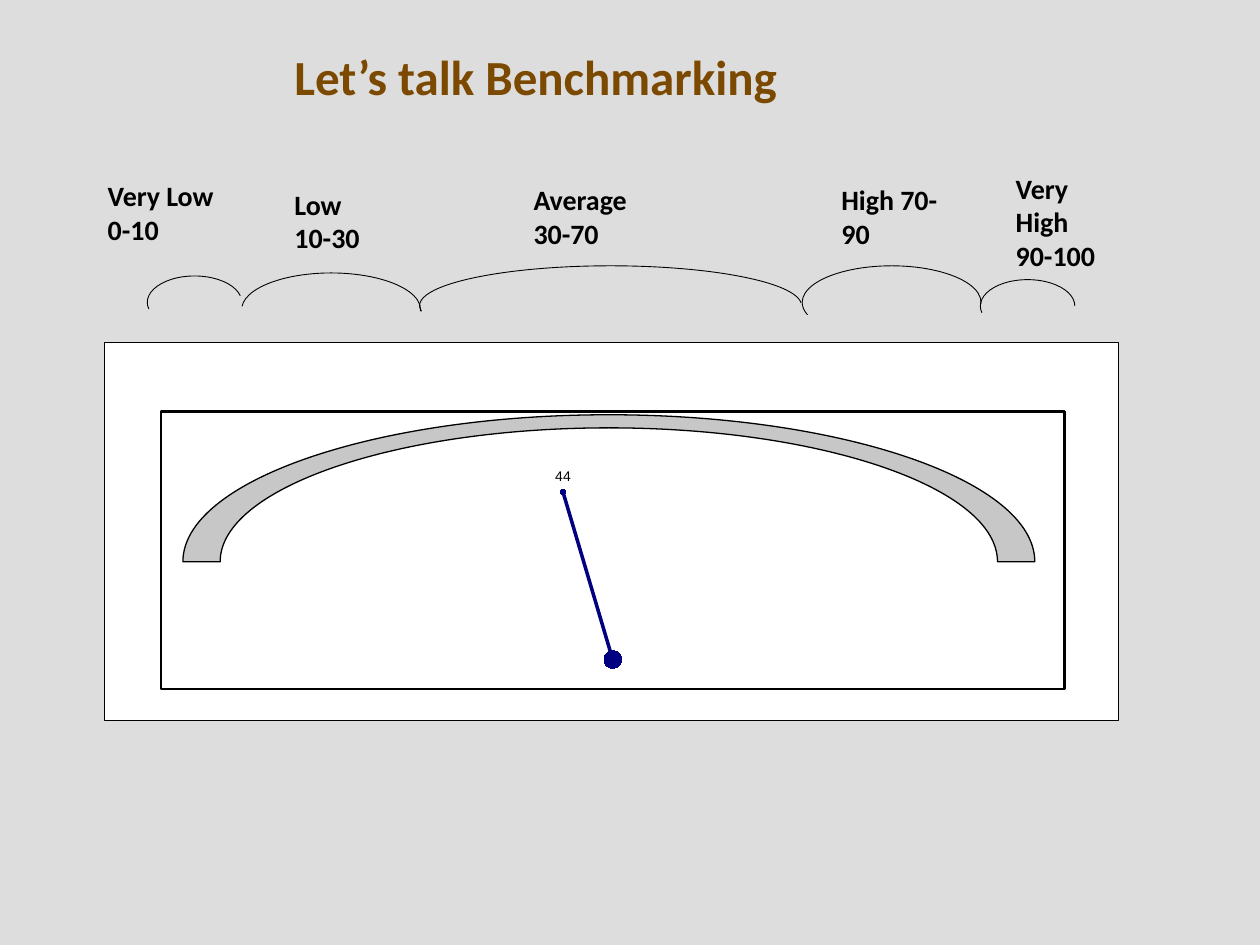
from dataclasses import dataclass

from lxml import etree
from pptx import Presentation
from pptx.chart.data import XyChartData
from pptx.dml.color import RGBColor
from pptx.enum.chart import XL_CHART_TYPE, XL_MARKER_STYLE
from pptx.enum.shapes import MSO_SHAPE
from pptx.oxml import parse_xml
from pptx.oxml.ns import nsdecls, qn
from pptx.util import Pt

ARC = MSO_SHAPE.ARC
SCATTER = XL_CHART_TYPE.XY_SCATTER_SMOOTH
CIRCLE = XL_MARKER_STYLE.CIRCLE

COLORS = {
    "background": "DDDDDD",
    "title": "7B4900",
    "ink": "000000",
    "panel": "FFFFFF",
    "needle": "000080",
    "dial": "C7C7C7",
}


@dataclass(frozen=True)
class Box:
    left: float
    top: float
    width: float
    height: float

    def lengths(self) -> tuple:
        return Pt(self.left), Pt(self.top), Pt(self.width), Pt(self.height)


@dataclass(frozen=True)
class Bracket:
    box: Box
    start: float  # degrees
    end: float


@dataclass(frozen=True)
class Caption:
    box: Box
    lines: tuple
    wrap: bool = True
    size: float = 16
    color: str = "ink"


BRACKETS = [
    Bracket(Box(84.2, 157.7, 54, 30.2), 171.6, 351.7),
    Bracket(Box(138.1, 156, 102.2, 41.8), 182.1, 1.1),
    Bracket(Box(239.8, 151.9, 218.2, 45.4), 178.3, 359.2),
    Bracket(Box(458.4, 151.9, 102.2, 41.8), 171.6, 1.1),
    Bracket(Box(560.2, 159.8, 54, 30.2), 171.6, 0),
]

CAPTIONS = [
    Caption(Box(54.5, 98.6, 83.5, 65.5), ("Very Low", "0-10")),
    Caption(Box(161.2, 103.5, 59.8, 46.1), ("Low 10-30",)),
    Caption(Box(473.7, 100.8, 71.3, 46.1), ("High 70-90",)),
    Caption(Box(573.3, 94.3, 75.6, 65.5), ("Very High", "90-100")),
    Caption(Box(161.2, 23, 385.9, 41), ("Let’s talk Benchmarking",),
            size=28, color="title"),
]
AVERAGE = Caption(Box(297.8, 100.8, 81.4, 46.1), ("Average", "30-70"), wrap=False)

GAUGE = Box(59.5, 195.4, 579.6, 216.5)
PLOT_SHARE = {"x": 0.056, "y": 0.183, "w": 0.891, "h": 0.734}
SCORE = "44"
NEEDLE_POINTS = [(0, 15), (-0.132, 100)]
PIVOT_SIZE, TIP_SIZE = 10, 3

DIAL_CENTER = (347.9, 321)
DIAL_OUTER = (243.4, 84)
DIAL_INNER = (222.1, 76.5)
CURVE_PULL = 0.55  # Bezier handle length of a quarter ellipse


def rgb(name: str) -> RGBColor:
    return RGBColor.from_string(COLORS[name])


def draw_bracket(slide, bracket: Bracket) -> None:
    arc = slide.shapes.add_shape(ARC, *bracket.box.lengths())
    arc.shadow.inherit = False
    # Arc angles are stored in 1/60000 degree, adjustments in 1/100000.
    arc.adjustments[0] = bracket.start * 0.6
    arc.adjustments[1] = bracket.end * 0.6
    arc.fill.background()
    arc.line.color.rgb = rgb("ink")
    arc.line.width = Pt(0.5)


def draw_caption(slide, caption: Caption) -> None:
    frame = slide.shapes.add_textbox(*caption.box.lengths()).text_frame
    frame.word_wrap = caption.wrap
    for index, line in enumerate(caption.lines):
        paragraph = frame.add_paragraph() if index else frame.paragraphs[0]
        run = paragraph.add_run()
        run.text = line
        run.font.name = "Calibri"
        run.font.size = Pt(caption.size)
        run.font.bold = True
        run.font.color.rgb = rgb(caption.color)


def solid_fill(name: str) -> str:
    return f'<a:solidFill><a:srgbClr val="{COLORS[name]}"/></a:solidFill>'


def area_format(border_width: float) -> etree._Element:
    """Panel fill and ink border for a chart area."""
    return parse_xml(
        f'<c:spPr {nsdecls("c", "a")}>{solid_fill("panel")}'
        f'<a:ln w="{Pt(border_width)}">{solid_fill("ink")}</a:ln></c:spPr>'
    )


def format_areas(chart) -> None:
    """Place the plot area and frame both it and the whole chart."""
    plot_area = chart._chartSpace.chart.plotArea
    for old_layout in plot_area.findall(qn("c:layout")):
        plot_area.remove(old_layout)
    modes = '<c:xMode val="edge"/><c:yMode val="edge"/>'
    shares = "".join(f'<c:{key} val="{share}"/>' for key, share in PLOT_SHARE.items())
    plot_area.insert(0, parse_xml(
        f'<c:layout {nsdecls("c")}><c:manualLayout><c:layoutTarget val="inner"/>'
        f'{modes}{shares}</c:manualLayout></c:layout>'
    ))
    plot_area.append(area_format(1.5))
    chart._chartSpace.chart.addnext(area_format(0.25))


def label_tip(needle) -> None:
    """Show the series name above every point but the pivot."""
    flags = "".join(
        f'<c:show{part} val="{int(part == "SerName")}"/>'
        for part in ("LegendKey", "Val", "CatName", "SerName", "Percent", "BubbleSize")
    )
    needle._element.find(qn("c:xVal")).addprevious(parse_xml(
        f'<c:dLbls {nsdecls("c", "a")}>'
        '<c:dLbl><c:idx val="0"/><c:delete val="1"/></c:dLbl>'
        '<c:spPr><a:noFill/></c:spPr>'
        '<c:txPr><a:bodyPr/><a:p><a:pPr><a:defRPr sz="800">'
        f'{solid_fill("ink")}<a:latin typeface="Arial"/></a:defRPr></a:pPr></a:p></c:txPr>'
        f'<c:dLblPos val="t"/>{flags}</c:dLbls>'
    ))


def format_marker(marker, size: int) -> None:
    marker.style = CIRCLE
    marker.size = size
    marker.format.fill.solid()
    marker.format.fill.fore_color.rgb = rgb("needle")
    marker.format.line.color.rgb = rgb("needle")


def draw_gauge(slide) -> None:
    data = XyChartData()
    needle_data = data.add_series(SCORE)
    for x, y in NEEDLE_POINTS:
        needle_data.add_data_point(x, y)
    chart = slide.shapes.add_chart(SCATTER, *GAUGE.lengths(), data).chart
    chart.has_title = False
    chart.has_legend = False
    chart.font.name = "Arial"
    chart.font.size = Pt(5)
    chart.font.color.rgb = rgb("ink")
    for axis, low, high in ((chart.category_axis, -1.2, 1.2),
                            (chart.value_axis, 0, 141)):
        axis.minimum_scale = low
        axis.maximum_scale = high
        axis.has_major_gridlines = False
        axis.visible = False

    chart.plots[0].vary_by_categories = False
    needle = chart.plots[0].series[0]
    needle.format.line.color.rgb = rgb("needle")
    needle.format.line.width = Pt(2)
    format_marker(needle.marker, 7)
    for index, size in enumerate((PIVOT_SIZE, TIP_SIZE)):
        format_marker(needle.points[index].marker, size)
    label_tip(needle)
    format_areas(chart)


def half_ellipse(radii: tuple) -> list:
    """Bezier points of two quarter curves over the top, left to right."""
    pull = CURVE_PULL
    units = [(-1, 0), (-1, pull), (-pull, 1), (0, 1), (pull, 1), (1, pull), (1, 0)]
    return [(Pt(DIAL_CENTER[0] + radii[0] * x), Pt(DIAL_CENTER[1] - radii[1] * y))
            for x, y in units]


def curve_segments(path: etree._Element, first: int) -> None:
    """Merge three straight segments, from position first on, into one curve."""
    segments = path.findall(qn("a:lnTo"))[first:first + 3]
    curve = etree.Element(qn("a:cubicBezTo"))
    segments[0].addprevious(curve)
    for segment in segments:
        curve.append(segment[0])
        path.remove(segment)


def draw_dial(slide) -> None:
    outline = half_ellipse(DIAL_OUTER) + half_ellipse(DIAL_INNER)[::-1]
    builder = slide.shapes.build_freeform(*outline[0])
    builder.add_line_segments(outline[1:], close=True)
    dial = builder.convert_to_shape()
    path = dial._element.find(f'.//{qn("a:path")}')
    # Two outer quarters, one straight end that stays, two inner quarters.
    for first in (0, 0, 1, 1):
        curve_segments(path, first)
    # The frame spans the whole ellipse, of which the upper half is drawn.
    path.set("h", str(2 * int(path.get("h"))))
    dial.height = 2 * dial.height
    dial.shadow.inherit = False
    dial.fill.solid()
    dial.fill.fore_color.rgb = rgb("dial")
    dial.line.color.rgb = rgb("ink")
    dial.line.width = Pt(0.75)


def main() -> None:
    deck = Presentation()
    deck.slide_width, deck.slide_height = Pt(720), Pt(540)
    slide = deck.slides.add_slide(deck.slide_layouts[6])
    slide.background.fill.solid()
    slide.background.fill.fore_color.rgb = rgb("background")
    for bracket in BRACKETS:
        draw_bracket(slide, bracket)
    for caption in CAPTIONS:
        draw_caption(slide, caption)
    draw_gauge(slide)
    draw_dial(slide)
    draw_caption(slide, AVERAGE)
    deck.save("out.pptx")


if __name__ == "__main__":
    main()
